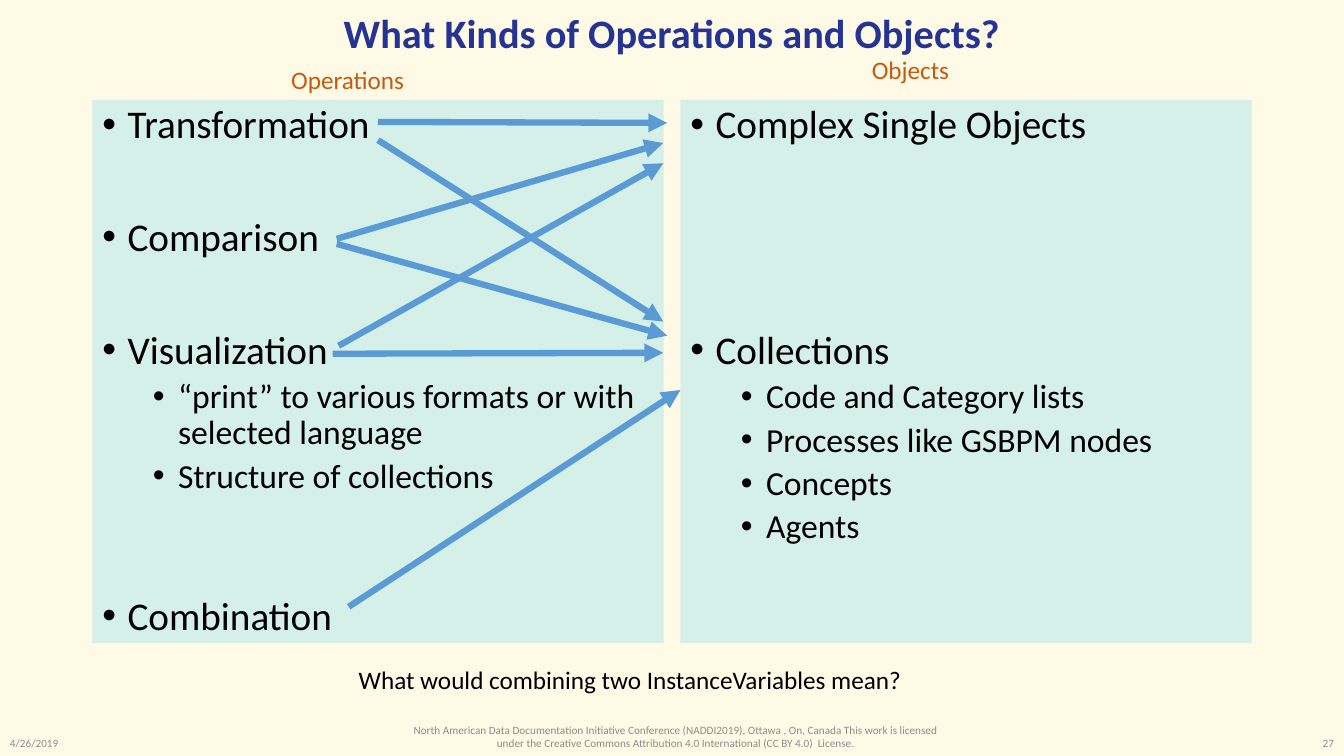
from lxml import etree
from pptx import Presentation
from pptx.dml.color import RGBColor
from pptx.enum.shapes import MSO_CONNECTOR
from pptx.enum.text import MSO_ANCHOR, MSO_AUTO_SIZE, PP_ALIGN
from pptx.oxml.ns import qn
from pptx.util import Pt

LEFT, CENTER, RIGHT = PP_ALIGN.LEFT, PP_ALIGN.CENTER, PP_ALIGN.RIGHT
TOP, MIDDLE = MSO_ANCHOR.TOP, MSO_ANCHOR.MIDDLE
FIXED, GROW = MSO_AUTO_SIZE.NONE, MSO_AUTO_SIZE.SHAPE_TO_FIT_TEXT
STRAIGHT = MSO_CONNECTOR.STRAIGHT

TWO_CONTENT = 3
ONE_ROW, TWO_SUBROWS, THREE_ROWS = 50.3, 72, 131  # space above an item, in points


def color(hex_code):
    return RGBColor.from_string(hex_code)


class OperationsSlide:
    font = "Calibri"
    cream, mint, navy = "FFFAE6", "D5EFE9", "253494"
    black, gray, orange, blue = "000000", "8C8C8C", "C55A11", "5B9BD5"
    item_sizes = (28, 24)

    def __init__(self, prs):
        self.slide = prs.slides.add_slide(prs.slide_layouts[TWO_CONTENT])
        fill = self.slide.background.fill
        fill.solid()
        fill.fore_color.rgb = color(self.cream)

    def place(self, shape, box):
        shape.left, shape.top, shape.width, shape.height = map(Pt, box)

    def add_words(self, paragraph, text, size, hex_code, bold=False):
        run = paragraph.add_run()
        run.text = text
        run.font.name, run.font.size, run.font.bold = self.font, Pt(size), bold
        run.font.color.rgb = color(hex_code)

    def title(self, text, box):
        title = self.slide.shapes.title
        self.place(title, box)
        frame = title.text_frame
        frame.auto_size, frame.vertical_anchor = FIXED, MIDDLE
        heading = frame.paragraphs[0]
        heading.alignment, heading.line_spacing = CENTER, 0.9
        self.add_words(heading, text, 28.8, self.navy, bold=True)

    def bullets(self, idx, box, items):
        panel = self.slide.placeholders[idx]
        self.place(panel, box)
        panel.fill.solid()
        panel.fill.fore_color.rgb = color(self.mint)
        frame = panel.text_frame
        frame.auto_size, frame.vertical_anchor = FIXED, TOP
        for number, (level, text, space) in enumerate(items):
            item = frame.add_paragraph() if number else frame.paragraphs[0]
            item.level, item.alignment = level, LEFT
            item.line_spacing, item.space_before = 0.9, Pt(space)
            props = item._p.get_or_add_pPr()
            props.set("marL", str(Pt(18 + 36 * level)))
            props.set("indent", str(Pt(-18)))
            etree.SubElement(props, qn("a:buFont")).set("typeface", "Arial")
            etree.SubElement(props, qn("a:buChar")).set("char", "•")
            self.add_words(item, text, self.item_sizes[level], self.black)

    def text(self, text, box, size, hex_code, align=LEFT, anchor=TOP, wrap=False):
        label = self.slide.shapes.add_textbox(*map(Pt, box))
        frame = label.text_frame
        frame.word_wrap, frame.vertical_anchor = wrap, anchor
        frame.auto_size = FIXED if wrap else GROW
        frame.paragraphs[0].alignment = align
        self.add_words(frame.paragraphs[0], text, size, hex_code)

    def small_print(self, text, box, align):
        self.text(text, box, 8, self.gray, align, MIDDLE, wrap=True)

    def arrow(self, start, end):
        link = self.slide.shapes.add_connector(STRAIGHT, *map(Pt, start + end))
        link.line.color.rgb = color(self.blue)
        link.line.width = Pt(4.5)
        props = link._element.spPr
        etree.SubElement(props.find(qn("a:ln")), qn("a:tailEnd")).set("type", "triangle")
        etree.SubElement(props, qn("a:effectLst"))


def main():
    prs = Presentation()
    prs.slide_width, prs.slide_height = Pt(960), Pt(540)
    page = OperationsSlide(prs)

    # Title and column headings
    page.title("What Kinds of Operations and Objects?", (66, 5, 828, 41))
    page.text("Operations", (200.9, 42.5, 96.5, 29), 18, page.orange)
    page.text("Objects", (615.6, 35.3, 70.6, 29), 18, page.orange)

    # Panels: level, text, space above
    panel_top, panel_width, panel_height = 71.3, 408, 388
    page.bullets(1, (66, panel_top, panel_width, panel_height), [
        (0, "Transformation", 10),
        (0, "Comparison", ONE_ROW),
        (0, "Visualization", ONE_ROW),
        (1, "“print” to various formats or with selected language", 5),
        (1, "Structure of collections", 5),
        (0, "Combination", TWO_SUBROWS),
    ])
    page.bullets(2, (486, panel_top, panel_width, panel_height), [
        (0, "Complex Single Objects", 10),
        (0, "Collections", THREE_ROWS),
        (1, "Code and Category lists", 5),
        (1, "Processes like GSBPM nodes", 5),
        (1, "Concepts", 5),
        (1, "Agents", 5),
    ])

    # Arrows from operations to objects
    for start, end in [
        ((270, 87.1), (476.6, 87.8)),      # Transformation to single objects
        ((270, 100.1), (473.8, 229.7)),    # Transformation to collections
        ((240.5, 170.6), (473.8, 102.2)),  # Comparison to single objects
        ((240.5, 174.2), (476.6, 239.8)),  # Comparison to collections
        ((241.9, 247), (473.8, 116.6)),    # Visualization to single objects
        ((237.6, 252.7), (473.8, 252)),    # Visualization to collections
        ((249.1, 433.4), (486, 278.6)),    # Combination to collections
    ]:
        page.arrow(start, end)

    # Closing question
    page.text("What would combining two InstanceVariables mean?",
              (249.1, 470.9, 406.8, 29), 18, page.black)

    # Date, conference and page number
    page.small_print("4/26/2019", (0, 521.3, 216, 18.7), LEFT)
    page.small_print(
        "North American Data Documentation Initiative Conference (NADDI2019), "
        "Ottawa , On, Canada This work is licensed under the Creative Commons "
        "Attribution 4.0 International (CC BY 4.0)  License.",
        (279.4, 512, 406.8, 28), CENTER)
    page.small_print("27", (744, 521.3, 216, 18.7), RIGHT)

    prs.save("out.pptx")


if __name__ == "__main__":
    main()
